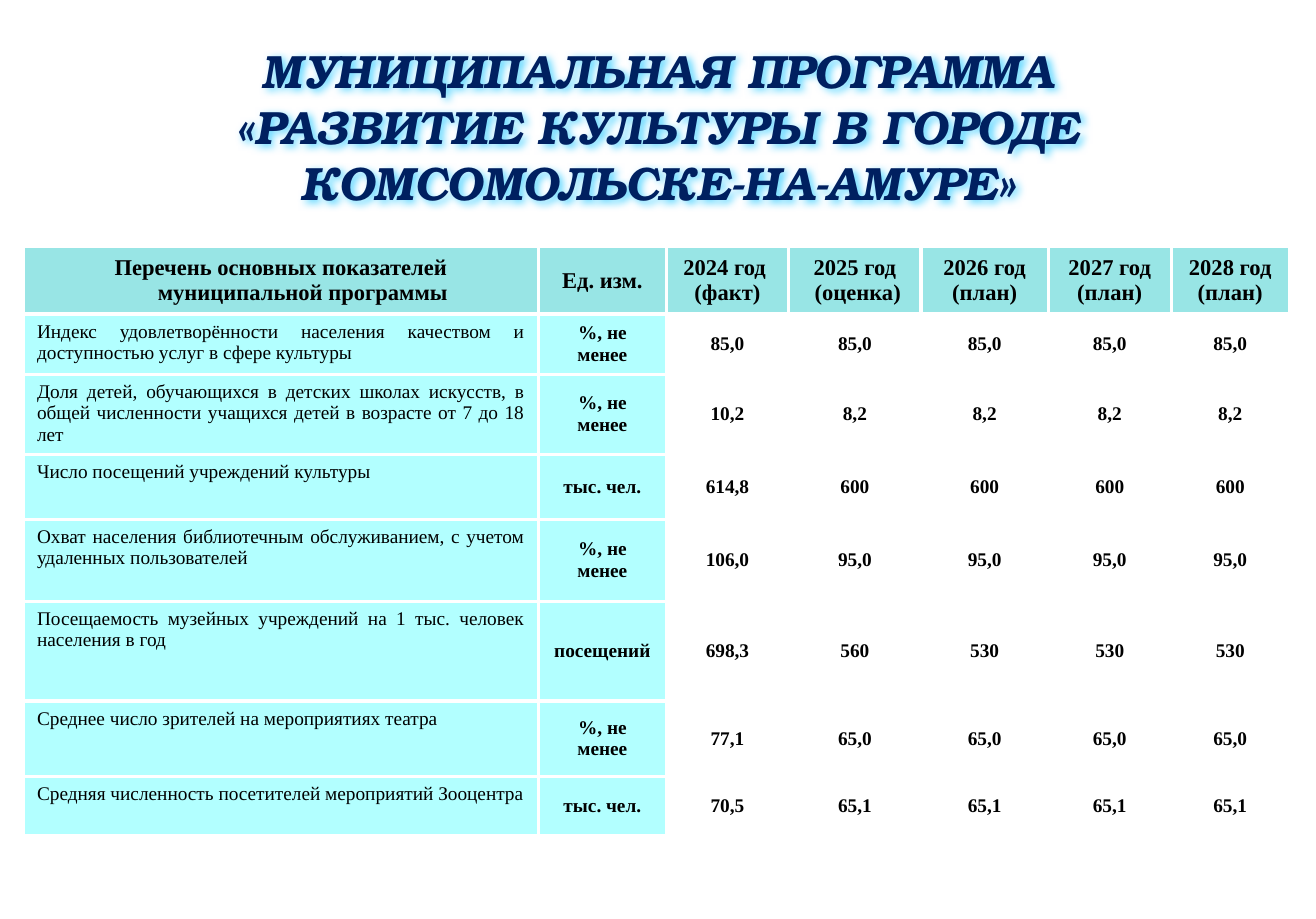
from dataclasses import dataclass

from lxml.etree import SubElement
from pptx import Presentation
from pptx.dml.color import RGBColor
from pptx.enum.text import MSO_ANCHOR as Anchor, MSO_AUTO_SIZE as AutoSize, PP_ALIGN as Align
from pptx.oxml import parse_xml
from pptx.oxml.ns import qn
from pptx.slide import Slide
from pptx.table import Table, _Cell as Cell
from pptx.text.text import _Paragraph as Paragraph
from pptx.util import Inches, Pt

DRAWING_NS = "http://schemas.openxmlformats.org/drawingml/2006/main"


@dataclass(frozen=True)
class Theme:
    title_font: str = "TeX Gyre Bonum"
    table_font: str = "Times New Roman"
    title_color: str = "002060"
    halo_color: str = "66D9FF"
    text_color: str = "000000"
    border_color: str = "FFFFFF"
    header_fill: str = "33CCCC"
    label_fill: str = "66FFFF"
    title_size: float = 29
    header_size: float = 14
    body_size: float = 12
    border_width: float = 2.25


@dataclass(frozen=True)
class CellStyle:
    size: float
    bold: bool = True
    fill: str | None = None
    align: Align = Align.CENTER
    anchor: Anchor = Anchor.MIDDLE
    margin_x: float = 0.11
    margin_y: float = 0.07
    hanging: float = 0


@dataclass(frozen=True)
class Indicator:
    name: str
    unit: str
    values: tuple[str, ...]


THEME = Theme()
HEADER = CellStyle(THEME.header_size, fill=THEME.header_fill)
HANGING_HEADER = CellStyle(THEME.header_size, fill=THEME.header_fill, hanging=0.38)
NAME = CellStyle(THEME.body_size, False, THEME.label_fill, Align.JUSTIFY, Anchor.TOP, 0.12, 0.06)
UNIT = CellStyle(THEME.body_size, fill=THEME.label_fill)
VALUE = CellStyle(THEME.body_size, hanging=0.38)

TITLE_LINES = (
    "МУНИЦИПАЛЬНАЯ ПРОГРАММА",
    "«РАЗВИТИЕ КУЛЬТУРЫ В ГОРОДЕ КОМСОМОЛЬСКЕ-НА-АМУРЕ»",
)
COLUMN_WIDTHS = (4.45, 1.1, 1.06, 1.14, 1.1, 1.06, 1.02)
ROW_HEIGHTS = (0.58, 0.52, 0.69, 0.56, 0.71, 0.86, 0.65, 0.51)
LABEL_HEADINGS = ("Перечень основных показателей муниципальной программы", "Ед. изм.")
YEAR_HEADINGS = (
    ("2024 год ", "(факт)"),
    ("2025 год", " (оценка)"),
    *((f"{year} год (план)",) for year in (2026, 2027, 2028)),
)
INDICATORS = (
    Indicator("Индекс удовлетворённости населения качеством и доступностью услуг в сфере культуры",
              "%, не менее", ("85,0",) * 5),
    Indicator("Доля детей, обучающихся в детских школах искусств, в общей численности "
              "учащихся детей в возрасте от 7 до 18 лет",
              "%, не менее", ("10,2",) + ("8,2",) * 4),
    Indicator("Число посещений учреждений культуры",
              "тыс. чел.", ("614,8",) + ("600",) * 4),
    Indicator("Охват населения библиотечным обслуживанием, с учетом удаленных пользователей",
              "%, не менее", ("106,0",) + ("95,0",) * 4),
    Indicator("Посещаемость музейных учреждений на 1 тыс. человек населения в год",
              "посещений", ("698,3", "560") + ("530",) * 3),
    Indicator("Среднее число зрителей на мероприятиях театра",
              "%, не менее", ("77,1",) + ("65,0",) * 4),
    Indicator("Средняя численность посетителей мероприятий Зооцентра",
              "тыс. чел.", ("70,5",) + ("65,1",) * 4),
)


def add_span(para: Paragraph, text: str, font: str, size: float, color: str,
             bold: bool, italic: bool = False) -> None:
    span = para.add_run()
    span.text = text
    span.font.name = font
    span.font.size = Pt(size)
    span.font.bold = bold
    span.font.italic = italic
    span.font.color.rgb = RGBColor.from_string(color)


def paint_cell(cell: Cell, fill: str | None) -> None:
    if fill is None:
        cell.fill.background()
    else:
        cell.fill.solid()
        cell.fill.fore_color.rgb = RGBColor.from_string(fill)
    properties = cell._tc.get_or_add_tcPr()
    for color in properties.iter(qn("a:srgbClr")):
        SubElement(color, qn("a:alpha"), val="50000")
    for position, side in enumerate(("lnL", "lnR", "lnT", "lnB")):
        border = parse_xml(
            f'<a:{side} xmlns:a="{DRAWING_NS}" w="{Pt(THEME.border_width)}"><a:solidFill>'
            f'<a:srgbClr val="{THEME.border_color}"/></a:solidFill></a:{side}>')
        properties.insert(position, border)


def fill_cell(cell: Cell, lines: tuple[str, ...], style: CellStyle) -> None:
    cell.margin_left = cell.margin_right = Inches(style.margin_x)
    cell.margin_top = cell.margin_bottom = Inches(style.margin_y)
    cell.vertical_anchor = style.anchor
    paint_cell(cell, style.fill)
    frame = cell.text_frame
    for index, line in enumerate(lines):
        para = frame.add_paragraph() if index else frame.paragraphs[0]
        para.alignment = style.align
        if style.hanging:
            properties = para._p.get_or_add_pPr()
            properties.set("marL", str(Inches(style.hanging)))
            properties.set("indent", str(-Inches(style.hanging)))
        add_span(para, line, THEME.table_font, style.size, THEME.text_color, style.bold)


def add_title(page: Slide) -> None:
    box = page.shapes.title
    box.left, box.top, box.width, box.height = map(Inches, (0, 0.2, 11.36, 1.73))
    frame = box.text_frame
    frame.word_wrap = True
    frame.auto_size = AutoSize.NONE
    frame.vertical_anchor = Anchor.BOTTOM
    frame.margin_left = frame.margin_right = Inches(0.12)
    frame.margin_top = frame.margin_bottom = Inches(0.12)
    for index, line in enumerate(TITLE_LINES):
        para = frame.add_paragraph() if index else frame.paragraphs[0]
        para.alignment = Align.CENTER
        add_span(para, line, THEME.title_font, THEME.title_size, THEME.title_color, True, True)
    effects = parse_xml(
        f'<a:effectLst xmlns:a="{DRAWING_NS}"><a:outerShdw blurRad="{Pt(5)}" dist="{Pt(2)}" '
        f'dir="2700000" algn="tl" rotWithShape="0"><a:srgbClr val="{THEME.halo_color}"/>'
        f'</a:outerShdw></a:effectLst>')
    box._element.spPr.append(effects)


def add_indicator_table(page: Slide) -> Table:
    frame = page.shapes.add_table(len(ROW_HEIGHTS), len(COLUMN_WIDTHS),
                                  Inches(0.2), Inches(2.13), Inches(10.95), Inches(5.08))
    table = frame.table
    table.first_row = table.horz_banding = False
    for column, width in zip(table.columns, COLUMN_WIDTHS):
        column.width = Inches(width)
    for row, height in zip(table.rows, ROW_HEIGHTS):
        row.height = Inches(height)
    headings = [((text,), HANGING_HEADER) for text in LABEL_HEADINGS]
    headings += [(lines, HEADER) for lines in YEAR_HEADINGS]
    rows = [headings]
    for indicator in INDICATORS:
        labels = [((indicator.name,), NAME), ((indicator.unit,), UNIT)]
        rows.append(labels + [((value,), VALUE) for value in indicator.values])
    for row, contents in zip(table.rows, rows):
        for cell, (lines, style) in zip(row.cells, contents):
            fill_cell(cell, lines, style)
    return table


def main() -> None:
    deck = Presentation()
    deck.slide_width, deck.slide_height = Inches(11.36), Inches(7.93)
    page = deck.slides.add_slide(deck.slide_layouts[5])
    add_indicator_table(page)
    add_title(page)
    deck.save("out.pptx")


if __name__ == "__main__":
    main()
